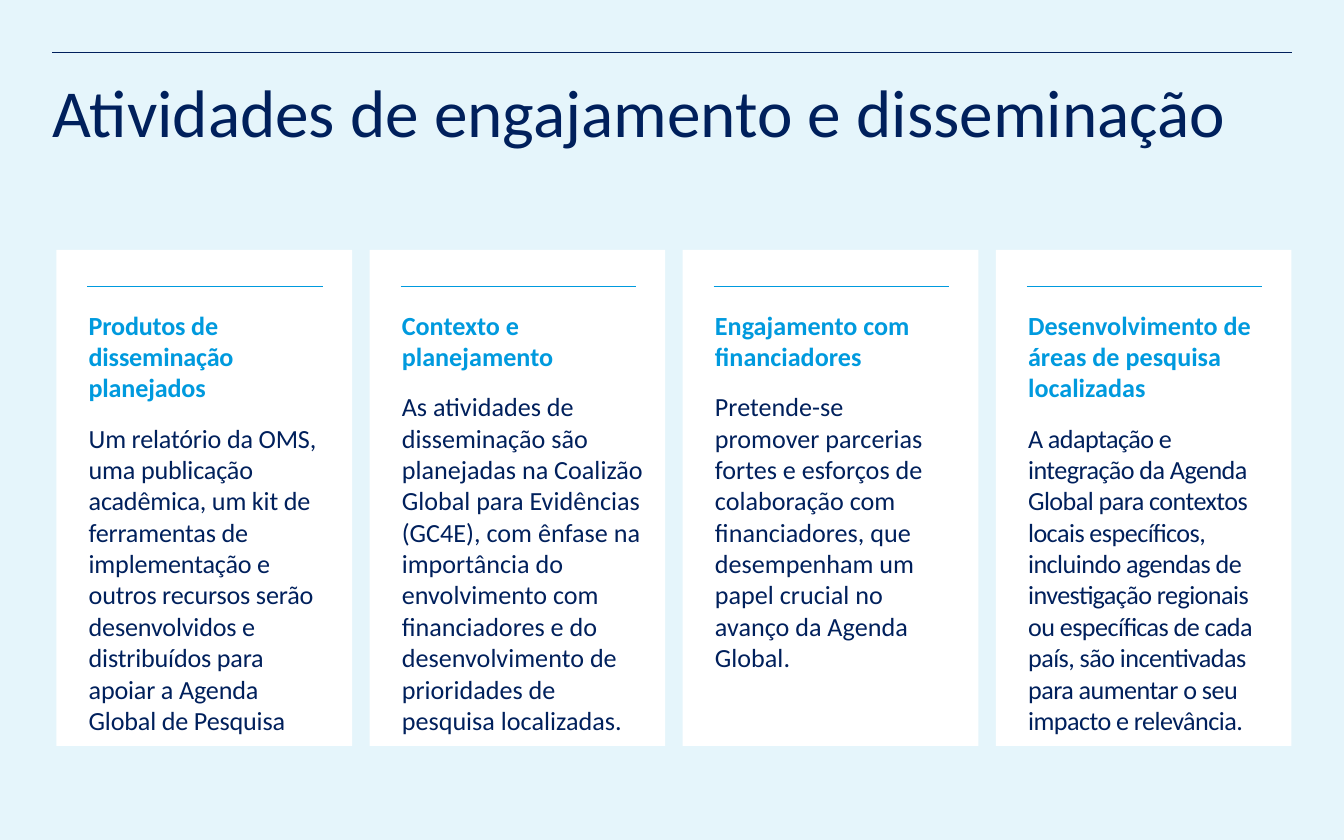
from lxml.etree import SubElement
from pptx import Presentation
from pptx.dml.color import RGBColor as Rgb
from pptx.enum.shapes import MSO_CONNECTOR as Link, MSO_SHAPE as Kind
from pptx.enum.text import MSO_ANCHOR as Anchor, MSO_AUTO_SIZE as Fit, PP_ALIGN as Align
from pptx.oxml.ns import qn
from pptx.util import Inches, Pt

WIDE, HIGH = 10, 6.25
EDGE = 0.39
FONT = "Calibri"
INK = {"back": "E5F5FB", "navy": "00205C", "sky": "009ADE", "card": "FFFFFF"}

LEFT, TOP, CARD_W, CARD_H, STEP = 0.42, 1.86, 2.2, 3.69, 2.33
PAD = 0.24

# heading, body, heading tracking, body tracking, extra text width
CARDS = [
    ("Produtos de disseminação planejados",
     "Um relatório da OMS, uma publicação acadêmica, um kit de ferramentas de "
     "implementação e outros recursos serão desenvolvidos e distribuídos para "
     "apoiar a Agenda Global de Pesquisa", -0.1, -0.1, 0),
    ("Contexto e planejamento",
     "As atividades de disseminação são planejadas na Coalizão Global para "
     "Evidências (GC4E), com ênfase na importância do envolvimento com "
     "financiadores e do desenvolvimento de prioridades de pesquisa localizadas.",
     0, 0, 0.13),
    ("Engajamento com financiadores",
     "Pretende-se promover parcerias fortes e esforços de colaboração com "
     "financiadores, que desempenham um papel crucial no avanço da Agenda Global.",
     0, 0, 0),
    ("Desenvolvimento de áreas de pesquisa localizadas",
     "A adaptação e integração da Agenda Global para contextos locais específicos, "
     "incluindo agendas de investigação regionais ou específicas de cada país, são "
     "incentivadas para aumentar o seu impacto e relevância.", 0, -0.3, 0.13),
]


def tint(name):
    return Rgb.from_string(INK[name])


def write(para, text, size=14, ink="navy", bold=False, track=0, after=0, lead=1.0):
    para.alignment = Align.LEFT
    para.space_before, para.space_after = Pt(0), Pt(after)
    para.line_spacing = lead
    run = para.add_run()
    run.text = text
    font = run.font
    font.name, font.size, font.bold = FONT, Pt(size), bold
    font.color.rgb = tint(ink)
    if track:
        run._r.get_or_add_rPr().set("spc", str(round(track * 100)))


def frame(shape, left=0, top=0, right=0):
    """Set the insets, wrapping and top anchor; return the text frame."""
    box = shape.text_frame
    box.word_wrap, box.auto_size = True, Fit.NONE
    box.vertical_anchor = Anchor.TOP
    box.margin_left, box.margin_top = Inches(left), Inches(top)
    box.margin_right, box.margin_bottom = Inches(right), 0
    return box


def rule(slide, x, y, w, ink):
    line = slide.shapes.add_connector(
        Link.STRAIGHT, Inches(x), Inches(y), Inches(x + w), Inches(y))
    line.line.color.rgb, line.line.width = tint(ink), Pt(0.5)
    SubElement(line._element.spPr, qn("a:effectLst"))


def head(slide, x, y, w, h, text):
    rule(slide, x, y, w, "navy")
    title = slide.shapes.title
    title.left, title.top = Inches(x), Inches(y)
    title.width, title.height = Inches(w), Inches(h)
    box = frame(title, top=0.2)
    write(box.paragraphs[0], text, size=36, lead=0.9)


def card(slide, x, y, w, h, name, body, name_track, body_track, extra):
    panel = slide.shapes.add_shape(
        Kind.RECTANGLE, Inches(x), Inches(y), Inches(w), Inches(h))
    panel.shadow.inherit = False
    panel.fill.solid()
    panel.fill.fore_color.rgb = tint("card")
    panel.line.fill.background()

    rule(slide, x + 0.23, y + 0.27, w - 0.45, "sky")

    area = slide.shapes.add_textbox(
        Inches(x), Inches(y + 0.44), Inches(w + extra), Inches(h - 0.65))
    box = frame(area, left=PAD, right=PAD)
    write(box.paragraphs[0], name, ink="sky", bold=True, track=name_track, after=10)
    write(box.add_paragraph(), body, track=body_track, after=10)


def main():
    deck = Presentation()
    deck.slide_width, deck.slide_height = Inches(WIDE), Inches(HIGH)
    slide = deck.slides.add_slide(deck.slide_layouts[5])
    back = slide.background.fill
    back.solid()
    back.fore_color.rgb = tint("back")

    head(slide, EDGE, EDGE, WIDE - 2 * EDGE, 1.47,
         "Atividades de engajamento e disseminação")
    for col, item in enumerate(CARDS):
        card(slide, LEFT + col * STEP, TOP, CARD_W, CARD_H, *item)
    deck.save("out.pptx")


if __name__ == "__main__":
    main()
